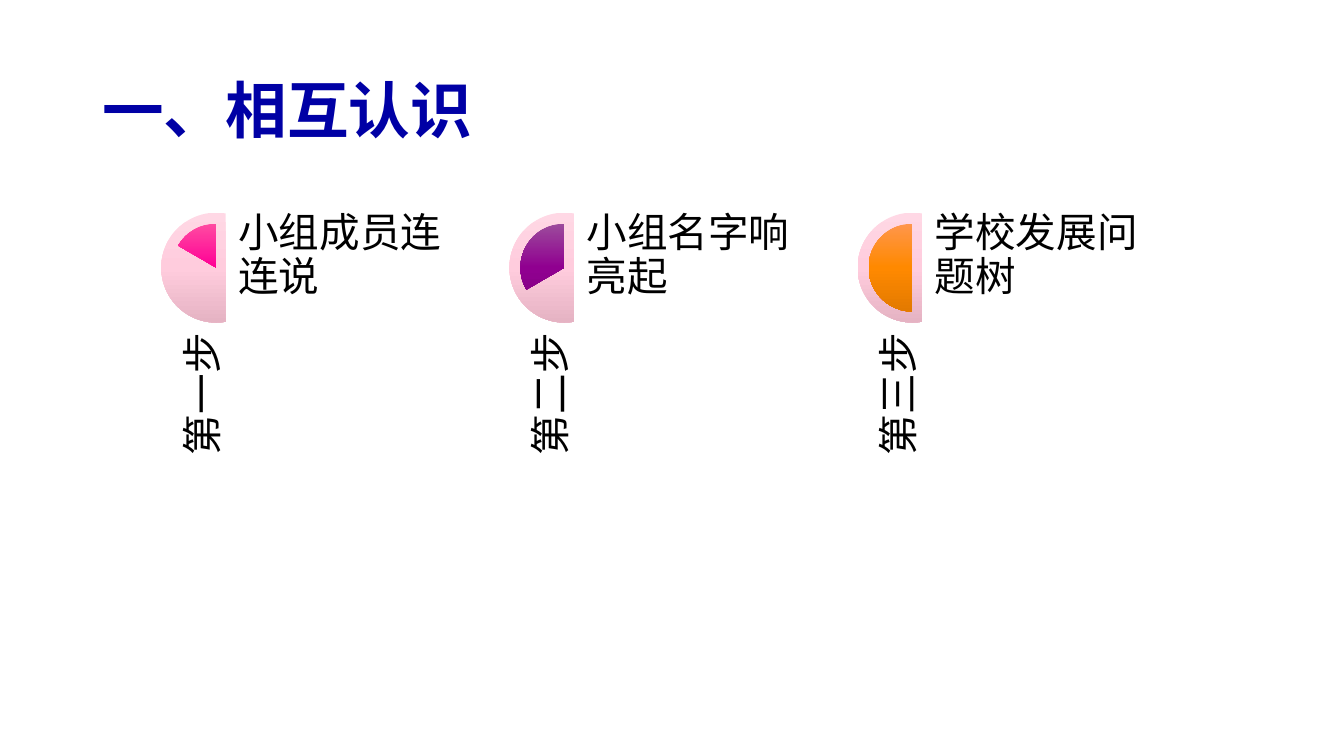
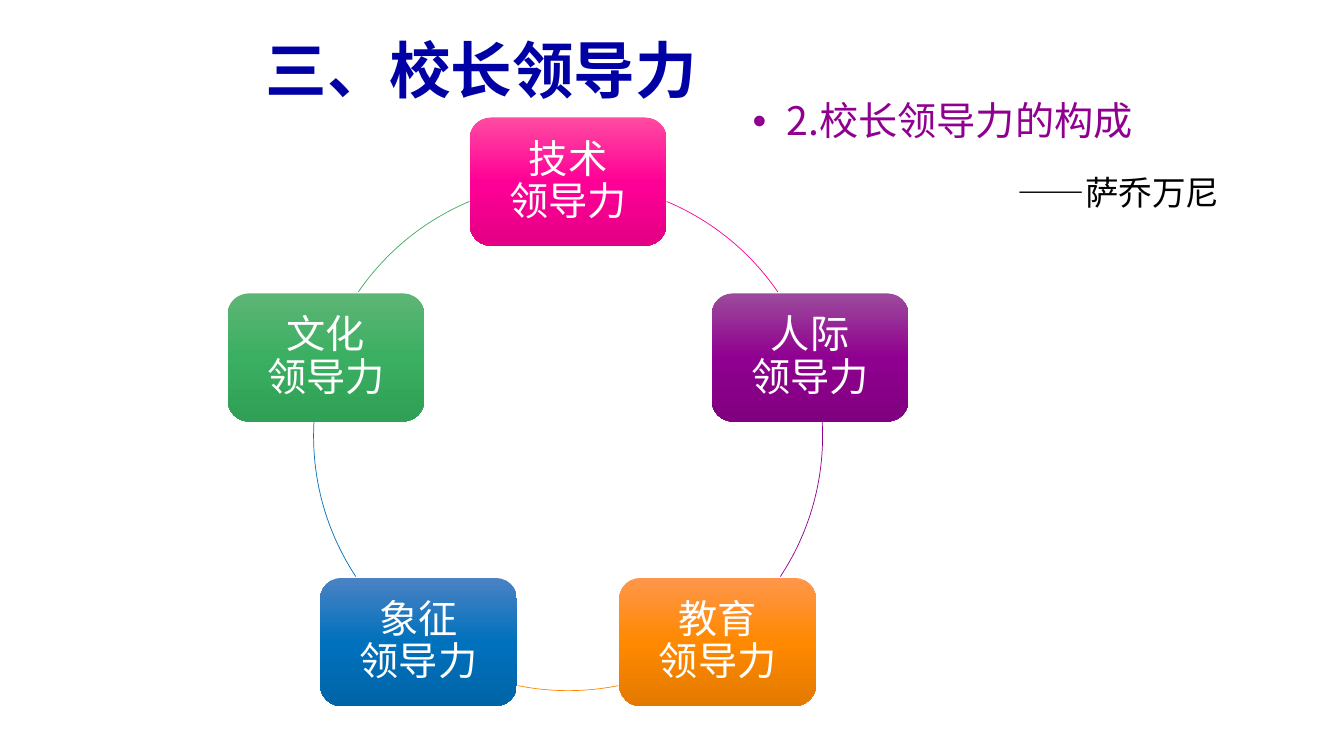
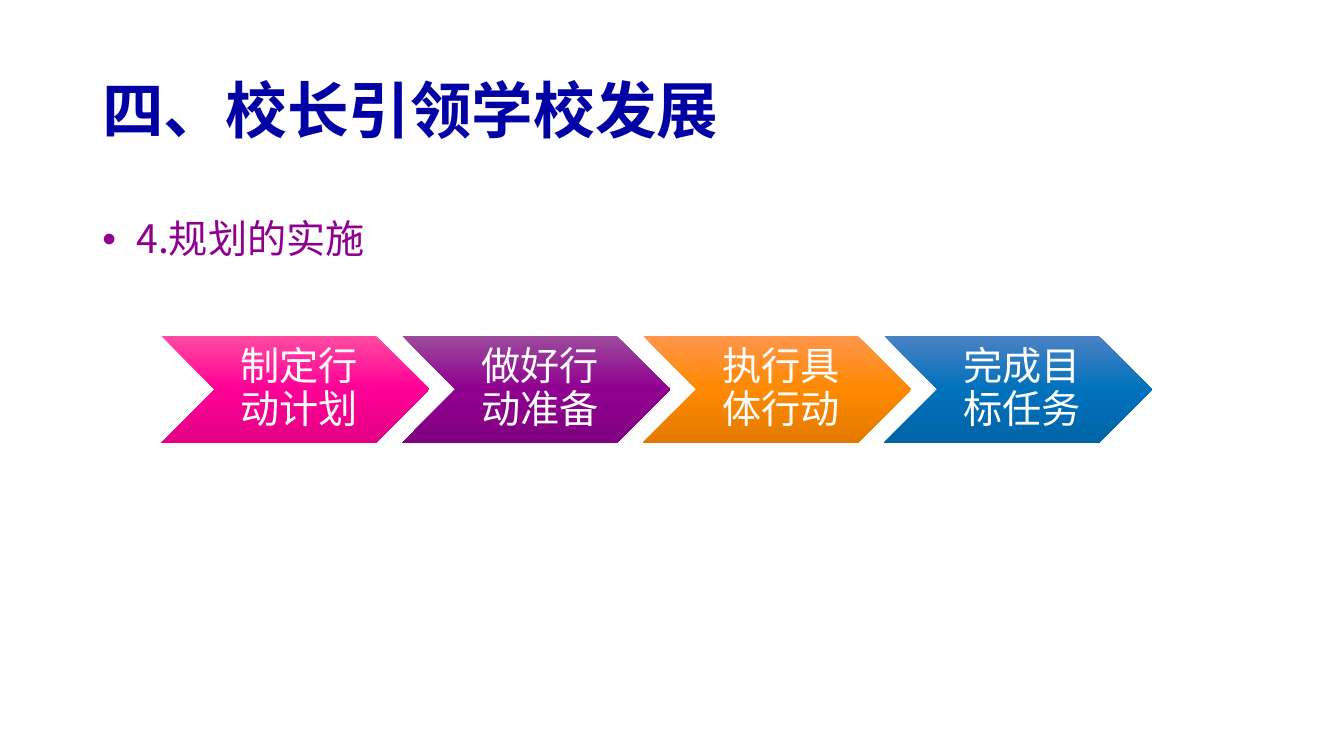
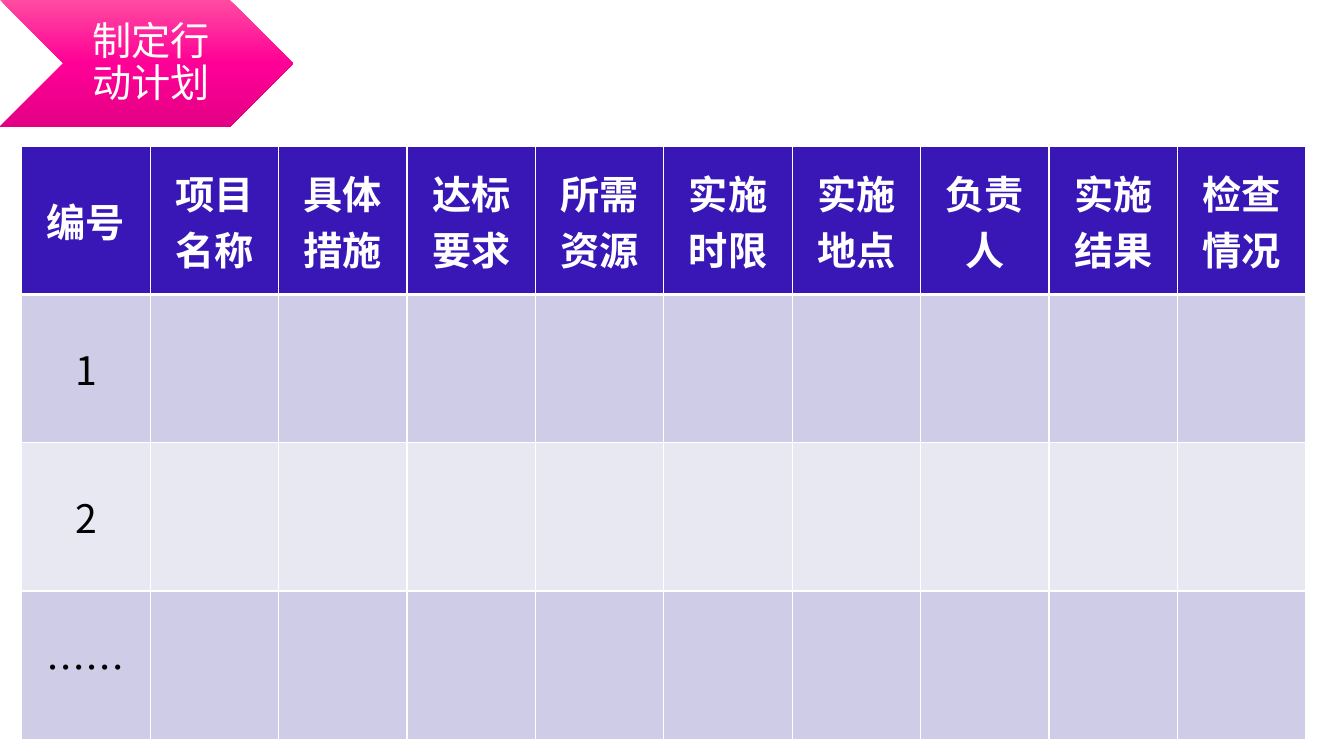
from copy import deepcopy
from math import cos, sin, radians

from lxml.etree import SubElement
from pptx import Presentation
from pptx.dml.color import RGBColor
from pptx.enum.shapes import MSO_SHAPE as Shape
from pptx.enum.text import MSO_ANCHOR as Anchor, PP_ALIGN as Align
from pptx.oxml.ns import qn
from pptx.util import Pt

# Shared look
FONT = "Noto Sans CJK SC"
HEX = {
    "title": "0000A5", "body": "900090", "black": "000000", "white": "FFFFFF",
    "head": "3917B7", "odd": "CECCE6", "even": "E8E8F3",
    "pink": "FF0096", "purple": "900090", "orange": "FF8900",
    "blue": "0071BC", "green": "40AA63",
}
GRADS = {
    "pale": ("FFD8E5", "FFCCDD", "E5B3C3"),
    "pink": ("FF4BA1", "FF0096", "E30085"),
    "purple": ("9C4B9C", "900090", "800080"),
    "orange": ("FF964B", "FF8900", "E37A00"),
    "blue": ("4B82C4", "0071BC", "0064A7"),
    "green": ("5DB576", "3BAF61", "2FA055"),
}

# Content: label, text, colour, start angle of the pie
STEPS = [
    ("第一步", "小组成员连连说", "pink", 210),
    ("第二步", "小组名字响亮起", "purple", 150),
    ("第三步", "学校发展问题树", "orange", 90),
]
# Name, colour, angles of the arc to the next box
POWERS = [
    ("技术\n领导力", "pink", 292.8, 325.5),
    ("人际\n领导力", "purple", 356.8, 33.5),
    ("教育\n领导力", "orange", 78.6, 101.4),
    ("象征\n领导力", "blue", 146.5, 183.2),
    ("文化\n领导力", "green", 214.5, 247.2),
]
STAGES = [
    ("制定行动计划", "pink"), ("做好行动准备", "purple"),
    ("执行具体行动", "orange"), ("完成目标任务", "blue"),
]
HEADS = ["编号", "项目名称", "具体措施", "达标要求", "所需资源",
         "实施时限", "实施地点", "负责人", "实施结果", "检查情况"]
ROWS = ["1", "2", "……"]


def rgb(name):
    return RGBColor.from_string(HEX[name])


def write(frame, text, size, color, align=Align.LEFT, bold=False,
          space=0.9, bullet=False):
    para = frame.paragraphs[0]
    para.text = text
    para.alignment = align
    para.line_spacing = space
    props = para._p.get_or_add_pPr()
    if bullet:
        props.set("marL", str(Pt(18)))
        props.set("indent", str(-Pt(18)))
        SubElement(props, qn("a:buFont"), typeface="Arial")
        SubElement(props, qn("a:buChar"), char="•")
    font = para.font
    font.name, font.size, font.bold = FONT, Pt(size), bold
    font.color.rgb = rgb(color)
    SubElement(props.find(qn("a:defRPr")), qn("a:ea"), typeface=FONT)


def inset(frame, left, top, right, bottom):
    frame.margin_left, frame.margin_top = Pt(left), Pt(top)
    frame.margin_right, frame.margin_bottom = Pt(right), Pt(bottom)


def label(slide, box, text, size, color, anchor=Anchor.TOP, pad=None,
          wrap=True, **style):
    item = slide.shapes.add_textbox(*map(Pt, box))
    frame = item.text_frame
    frame.word_wrap, frame.vertical_anchor = wrap, anchor
    if pad:
        inset(frame, *pad)
    write(frame, text, size, color, **style)
    return item


def title(slide, text, left=66, top=28.8):
    label(slide, (left, top, 777, 104.4), text, 44, "title",
          Anchor.MIDDLE, bold=True)


def bullet(slide, text, left, top, width):
    label(slide, (left, top, width, 72), text, 28, "body", bullet=True)


def shade(slide, kind, box, grad, angles=()):
    item = slide.shapes.add_shape(kind, *map(Pt, box))
    item.shadow.inherit = False
    item.line.fill.background()
    fill = item.fill
    fill.gradient()
    fill.gradient_angle = 270
    stops = item._element.spPr.find(".//" + qn("a:gsLst"))
    stops.insert(1, deepcopy(stops[0]))
    for i, (stop, tone) in enumerate(zip(fill.gradient_stops, GRADS[grad])):
        stop.position = i / 2
        stop.color.rgb = RGBColor.from_string(tone)
    turn(item, angles)
    return item


def turn(item, angles):
    # Angle adjustments count 60000 to the degree, scaled by 100000
    for i, angle in enumerate(angles):
        item.adjustments[i] = angle * 0.6


def block(slide, kind, box, text, grad, pad):
    frame = shade(slide, kind, box, grad).text_frame
    frame.word_wrap, frame.vertical_anchor = True, Anchor.MIDDLE
    inset(frame, *pad)
    write(frame, text, 28, "white", Align.CENTER)


def chevron(slide, box, text, grad):
    block(slide, Shape.CHEVRON, box, text, grad, (8.8, 2.9, 2.9, 2.9))


def steps(slide):
    title(slide, "一、相互认识")
    top, size, gap = 151.9, 78.5, 7.85
    for i, (name, text, grad, start) in enumerate(STEPS):
        left = 115.2 + i * 248.7
        shade(slide, Shape.CHORD, (left, top, size, size), "pale", (80, 280))
        core = size - 2 * gap
        shade(slide, Shape.PIE, (left + gap, top + gap, core, core),
              grad, (start, 270))
        side = label(slide, (left - 90.7, 328.3, 227.5, 46.8), name, 29,
                     "black", Anchor.BOTTOM, (0, 0, 0, 0), align=Align.RIGHT)
        side.rotation = 270
        label(slide, (left + 55, top, 157, 314), text, 29, "black",
              pad=(0, 0, 0, 0))


def powers(slide):
    title(slide, "三、校长领导力", 182.9, 0)
    bullet(slide, " 2.校长领导力的构成", 530.6, 69.1, 400)
    mid, axis, ray = 405.8, 311.5, 181.8
    wide, high = 140.6, 91.6
    for i, (name, tone, start, end) in enumerate(POWERS):
        angle = radians(72 * i - 90)
        left = mid + ray * cos(angle) - wide / 2
        top = axis + ray * sin(angle) - high / 2
        block(slide, Shape.ROUNDED_RECTANGLE, (left, top, wide, high),
              name, tone, (8.8, 8.8, 8.8, 8.8))
        ring = (mid - ray, axis - ray, 2 * ray, 2 * ray)
        arc = slide.shapes.add_shape(Shape.ARC, *map(Pt, ring))
        arc.shadow.inherit = False
        arc.fill.background()
        arc.line.color.rgb, arc.line.width = rgb(tone), Pt(0.5)
        turn(arc, (start, end))
    label(slide, (720, 119.5, 163.4, 36), "——萨乔万尼", 24, "black",
          wrap=False, space=1)


def stages(slide):
    title(slide, "四、校长引领学校发展")
    bullet(slide, " 4.规划的实施", 66, 153.4, 777)
    for i, (text, grad) in enumerate(STAGES):
        chevron(slide, (115.2 + i * 172.1, 239.8, 191.5, 76.5), text, grad)


def border(cell, widths):
    props = cell._tc.get_or_add_tcPr()
    for side, width in zip("LRTB", widths):
        line = SubElement(props, qn("a:ln" + side), w=str(Pt(width)))
        fill = SubElement(line, qn("a:solidFill"))
        SubElement(fill, qn("a:srgbClr"), val=HEX["white"])


def plan(slide):
    rows = [HEADS] + [[name] + [""] * (len(HEADS) - 1) for name in ROWS]
    box = (15.5, 104.6, 917.3, 423.4)
    table = slide.shapes.add_table(len(rows), len(HEADS),
                                   *map(Pt, box)).table
    for col in table.columns:
        col.width = Pt(box[2] / len(HEADS))
    for r, row in enumerate(rows):
        table.rows[r].height = Pt(box[3] / len(rows))
        for c, text in enumerate(row):
            cell = table.cell(r, c)
            border(cell, (1, 1, 3 if r == 1 else 1, 3 if r == 0 else 1))
            cell.fill.solid()
            tone = "head" if r == 0 else "odd" if r % 2 else "even"
            cell.fill.fore_color.rgb = rgb(tone)
            cell.vertical_anchor = Anchor.MIDDLE
            if text:
                write(cell.text_frame, text, 28,
                      "black" if r else "white", Align.CENTER, r == 0, 1)
    chevron(slide, (0, 0, 209.5, 90.7), *STAGES[0])


def main():
    deck = Presentation()
    deck.slide_width, deck.slide_height = Pt(960), Pt(540)
    for draw in (steps, powers, stages, plan):
        draw(deck.slides.add_slide(deck.slide_layouts[6]))
    deck.save("out.pptx")


if __name__ == "__main__":
    main()
